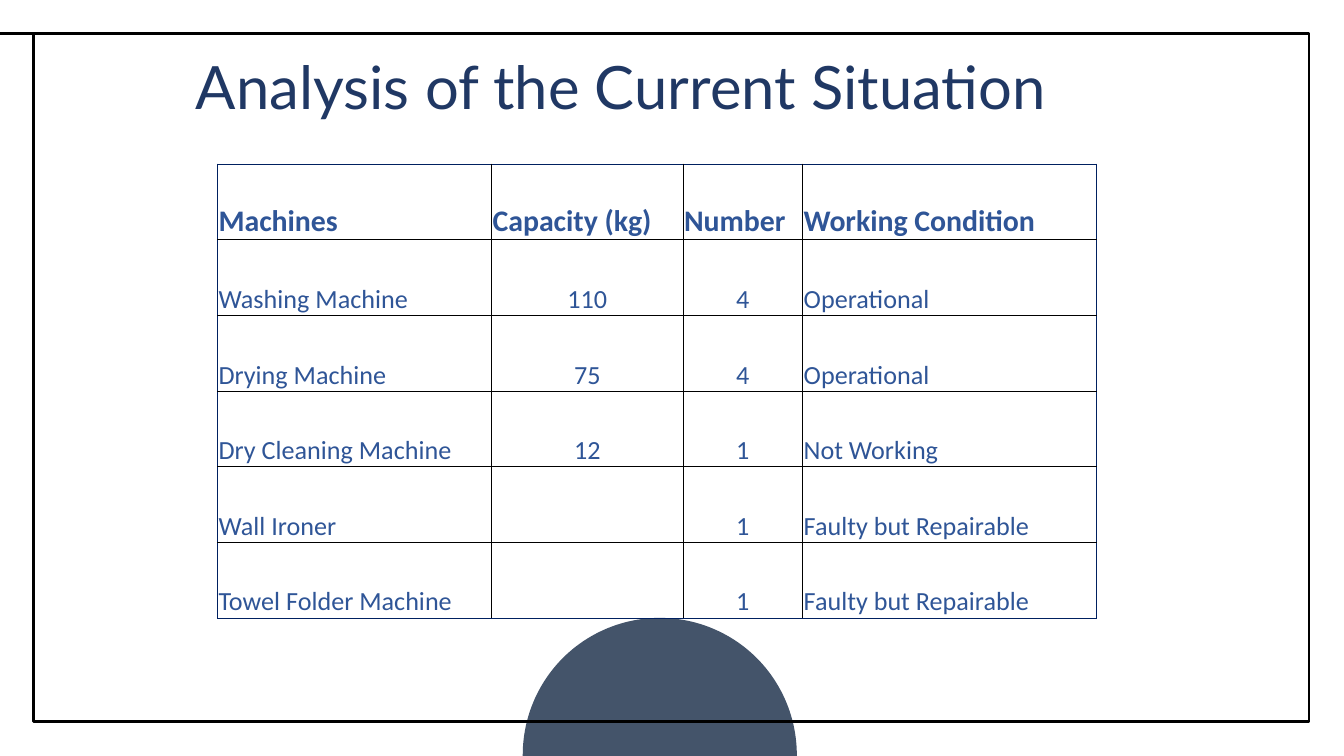
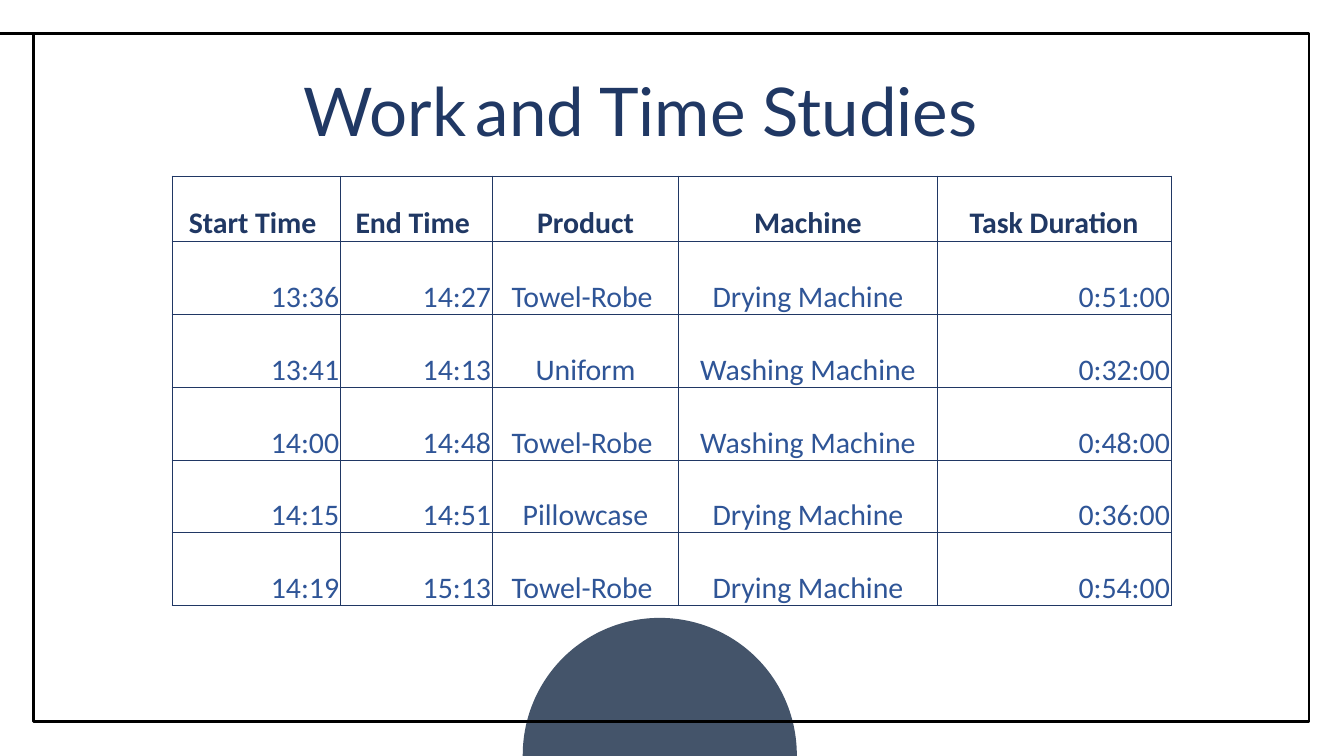
from lxml.etree import SubElement
from pptx import Presentation
from pptx.dml.color import RGBColor
from pptx.enum.shapes import MSO_CONNECTOR, MSO_SHAPE
from pptx.enum.text import MSO_ANCHOR, MSO_AUTO_SIZE, PP_ALIGN
from pptx.oxml import parse_xml
from pptx.oxml.ns import nsdecls, qn
from pptx.util import Cm, Pt

NAVY, BLUE, SLATE, BLACK = "203864", "2F5597", "44546A", "000000"
ALIGN = {"l": PP_ALIGN.LEFT, "c": PP_ALIGN.CENTER, "r": PP_ALIGN.RIGHT}

MACHINES = [
    ["Machines", "Capacity (kg)", "Number", "Working Condition"],
    ["Washing Machine", "110", "4", "Operational"],
    ["Drying Machine", "75", "4", "Operational"],
    ["Dry Cleaning Machine", "12", "1", "Not Working"],
    ["Wall Ironer", "", "1", "Faulty but Repairable"],
    ["Towel Folder Machine", "", "1", "Faulty but Repairable"],
]
TIMES = [
    ["Start Time ", "End Time ", "Product", "Machine", "Task Duration"],
    ["13:36", "14:27", "Towel-Robe ", "Drying Machine", "0:51:00"],
    ["13:41", "14:13", "Uniform", "Washing Machine", "0:32:00"],
    ["14:00", "14:48", "Towel-Robe ", "Washing Machine", "0:48:00"],
    ["14:15", "14:51", "Pillowcase", "Drying Machine", "0:36:00"],
    ["14:19", "15:13", "Towel-Robe ", "Drying Machine", "0:54:00"],
]


def color(code):
    return RGBColor.from_string(code)


def style(font, name, size, code, bold=False):
    font.name, font.size, font.bold = name, Pt(size), bold
    font.color.rgb = color(code)


def border(cell, sides):
    """Draw half-point cell edges; sides holds colours for left, right, top, bottom."""
    props = cell._tc.get_or_add_tcPr()
    for i, (side, code) in enumerate(zip("LRTB", sides)):
        props.insert(i, parse_xml(
            f'<a:ln{side} {nsdecls("a")} w="6350"><a:solidFill>'
            f'<a:srgbClr val="{code}"/></a:solidFill></a:ln{side}>'))


class Deck:
    def __init__(self):
        self.prs = Presentation()
        self.prs.slide_width, self.prs.slide_height = Cm(25.4), Cm(14.29)
        self.slide = None

    def add(self):
        """Start a slide with the shared circle and frame."""
        self.slide = self.prs.slides.add_slide(self.prs.slide_layouts[5])
        self.shape(MSO_SHAPE.OVAL, 9.88, 11.68, 5.18, 5.18, fill=SLATE)
        self.shape(MSO_SHAPE.RECTANGLE, 0.64, 0.64, 24.1, 13, line=BLACK)
        self.line(0.71, 0.64, -0.15, 0.64)

    def shape(self, kind, x, y, w, h, fill=None, line=None):
        item = self.slide.shapes.add_shape(kind, Cm(x), Cm(y), Cm(w), Cm(h))
        item.shadow.inherit = False
        if fill:
            item.fill.solid()
            item.fill.fore_color.rgb = color(fill)
        else:
            item.fill.background()
        if line:
            item.line.color.rgb = color(line)
            item.line.width = Pt(1.5)
        else:
            item.line.fill.background()

    def line(self, x1, y1, x2, y2):
        item = self.slide.shapes.add_connector(
            MSO_CONNECTOR.STRAIGHT, Cm(x1), Cm(y1), Cm(x2), Cm(y2))
        item.line.color.rgb = color(BLACK)
        item.line.width = Pt(1.5)
        SubElement(item._element.spPr, qn("a:effectLst"))

    def title(self, x, y, w, h, *runs):
        """Fill the title; each run is (text, font, size, colour)."""
        item = self.slide.shapes.title
        item.left, item.top, item.width, item.height = Cm(x), Cm(y), Cm(w), Cm(h)
        frame = item.text_frame
        frame.word_wrap = False
        frame.auto_size = MSO_AUTO_SIZE.SHAPE_TO_FIT_TEXT
        frame.vertical_anchor = MSO_ANCHOR.TOP
        para = frame.paragraphs[0]
        para.alignment = PP_ALIGN.LEFT
        for text, *look in runs:
            run = para.add_run()
            run.text = text
            style(run.font, *look)
        if len(runs) == 1:
            style(para.font, *runs[0][1:])

    def table(self, x, y, cols, rows, data, head, body, edge, grid):
        """Add a table; head and body are (alignments, size, colour, spacing)."""
        table = self.slide.shapes.add_table(
            len(data), len(cols), Cm(x), Cm(y), Cm(sum(cols)), Cm(sum(rows))).table
        table.first_row = table.horz_banding = False
        for col, width in zip(table.columns, cols):
            col.width = Cm(width)
        for row, height in zip(table.rows, rows):
            row.height = Cm(height)
        for r, line in enumerate(data):
            aligns, size, code, space = body if r else head
            for c, text in enumerate(line):
                cell = table.cell(r, c)
                cell.text = text
                cell.fill.background()
                cell.vertical_anchor = MSO_ANCHOR.BOTTOM
                cell.margin_left = cell.margin_right = cell.margin_top = Cm(0.02)
                cell.margin_bottom = 0
                para = cell.text_frame.paragraphs[0]
                para.alignment = ALIGN[aligns[c]]
                para.line_spacing = space
                style(para.font, "Calibri", size, code, r == 0)
                outer = (c == 0, c == len(cols) - 1, r == 0, r == len(data) - 1)
                border(cell, [edge if out else grid for out in outer])


def main():
    deck = Deck()

    deck.add()
    deck.title(3.45, 0.81, 18.52, 2.31,
               ("Analysis of the Current Situation", "Lato", 32, NAVY))
    deck.table(4.11, 3.1, [5.18, 3.62, 2.26, 5.56], [1.43] * 6, MACHINES,
               ("llll", 16, BLUE, 2.0), ("lccl", 14, BLUE, 2.0), "002060", BLACK)

    deck.add()
    deck.title(5.49, 1.19, 14.4, 1.8, ("Work", "Lato", 36, NAVY),
               (" ", "Arial", 18, BLACK), ("and Time Studies", "Lato", 36, NAVY))
    deck.table(3.25, 3.33, [3.18, 2.87, 3.53, 4.88, 4.42], [1.24] + [1.37] * 5, TIMES,
               ("ccccc", 16, NAVY, 1.5), ("rrccr", 16, BLUE, 2.0), "203764", "203764")

    deck.prs.save("out.pptx")


if __name__ == "__main__":
    main()
